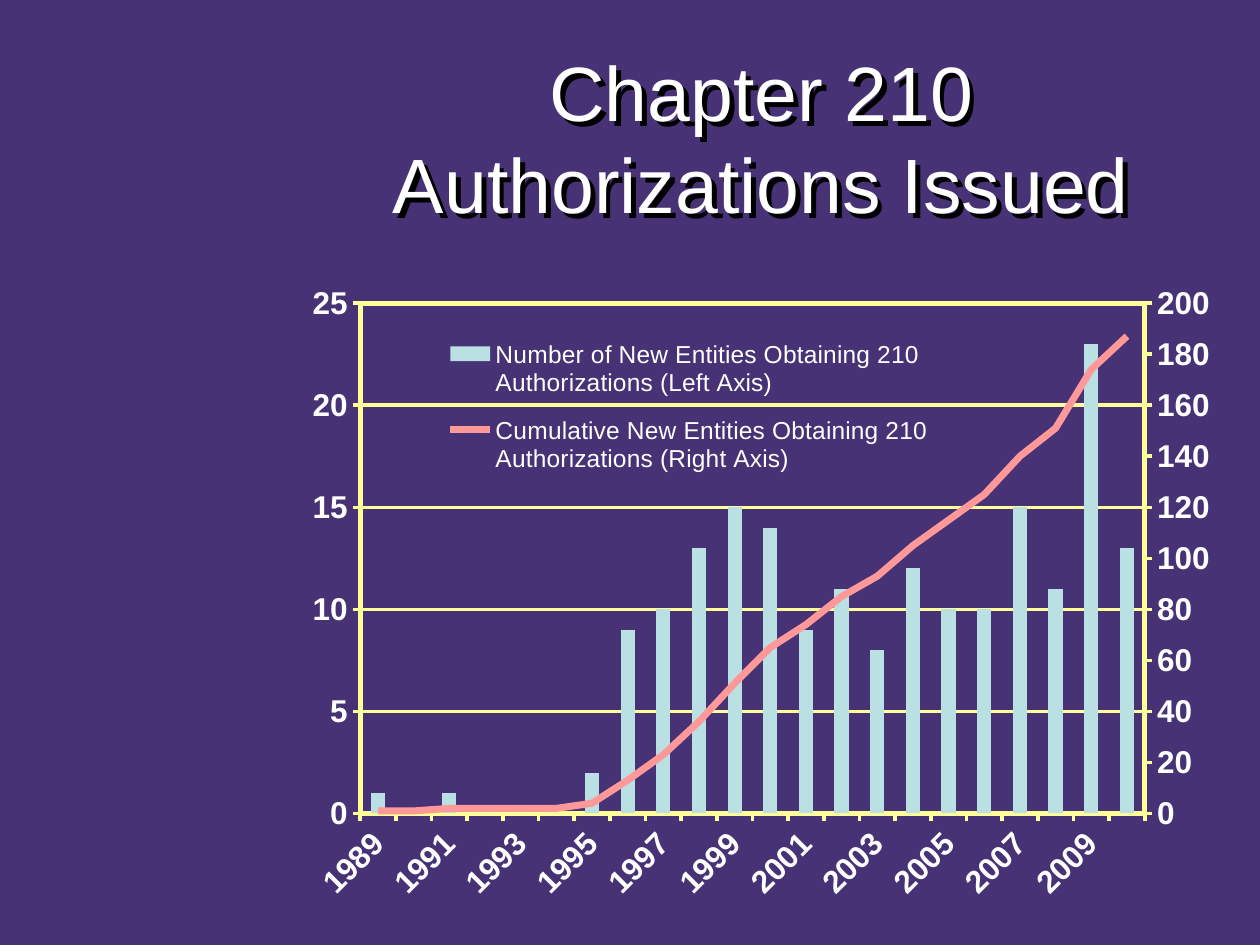
"""Build the slide on Chapter 210 authorizations with a two-axis chart."""
from copy import deepcopy

from lxml import etree
from pptx import Presentation
from pptx.chart.axis import ValueAxis
from pptx.chart.data import CategoryChartData
from pptx.dml.color import RGBColor
from pptx.enum.chart import XL_CHART_TYPE as ChartType
from pptx.enum.chart import XL_LEGEND_POSITION as LegendPosition
from pptx.enum.chart import XL_MARKER_STYLE as MarkerStyle
from pptx.enum.chart import XL_TICK_MARK as TickMark
from pptx.enum.text import MSO_ANCHOR as Anchor
from pptx.enum.text import PP_ALIGN as Align
from pptx.oxml import parse_xml
from pptx.oxml.ns import qn
from pptx.util import Cm, Pt

TITLE = "Chapter 210 Authorizations Issued"
YEARS = [str(year) for year in range(1989, 2011)]
NEW_NAME = "Number of New Entities Obtaining 210 Authorizations (Left Axis)"
NEW_VALUES = [1, 0, 1, 0, 0, 0, 2, 9, 10, 13, 15, 14, 9, 11, 8, 12, 10, 10, 15, 11, 23, 13]
TOTAL_NAME = "Cumulative New Entities Obtaining 210 Authorizations (Right Axis)"
TOTAL_VALUES = [1, 1, 2, 2, 2, 2, 4, 13, 23, 36, 51, 65, 74, 85, 93, 105, 115, 125,
                140, 151, 174, 187]
COLORS = {"background": "473275", "text": "FFFFFF", "shadow": "000000",
          "axis": "FFFF99", "bar": "BBE0E3", "line": "FF9999"}
FONT = "Arial"
TITLE_BOX = (5.93, 0.64, 18.84, 4.23)
CHART_BOX = (5.93, 5.5, 18.84, 12.91)
PLOT_BOX = (7.26, 6.11, 15.82, 10.29)
LEGEND_BOX = (8.9, 6.47, 9.99, 3.47)
CHART_NS = "http://schemas.openxmlformats.org/drawingml/2006/chart"
DRAWING_NS = "http://schemas.openxmlformats.org/drawingml/2006/main"


def color(name):
    return RGBColor.from_string(COLORS[name])


def style_line(line, name, width):
    line.color.rgb = color(name)
    line.width = Pt(width)


def style_font(font, size, bold=False):
    font.name = FONT
    font.size = Pt(size)
    font.bold = bold
    font.color.rgb = color("text")


def manual_layout(box, inner=False):
    left, top, width, height = box
    chart_left, chart_top, chart_width, chart_height = CHART_BOX
    shares = {"x": (left - chart_left) / chart_width, "y": (top - chart_top) / chart_height,
              "w": width / chart_width, "h": height / chart_height}
    target = '<c:layoutTarget val="inner"/>' if inner else ""
    modes = '<c:xMode val="edge"/><c:yMode val="edge"/>'
    sizes = "".join(f'<c:{key} val="{share:.4f}"/>' for key, share in shares.items())
    return parse_xml(f'<c:layout xmlns:c="{CHART_NS}"><c:manualLayout>'
                     f"{target}{modes}{sizes}</c:manualLayout></c:layout>")


def remove_children(element, tag):
    for child in element.findall(qn(tag)):
        element.remove(child)


def add_title(slide):
    shape = slide.shapes.add_textbox(*map(Cm, TITLE_BOX))
    shape._element.spPr.append(parse_xml(
        f'<a:effectLst xmlns:a="{DRAWING_NS}">'
        f'<a:outerShdw dist="{Pt(4)}" dir="2700000" algn="ctr" rotWithShape="0">'
        f'<a:srgbClr val="{COLORS["shadow"]}"/></a:outerShdw></a:effectLst>'))
    frame = shape.text_frame
    frame.word_wrap = True
    frame.vertical_anchor = Anchor.MIDDLE
    paragraph = frame.paragraphs[0]
    paragraph.alignment = Align.CENTER
    run = paragraph.add_run()
    run.text = TITLE
    style_font(run.font, 44)


def style_axis(axis):
    axis.major_tick_mark = TickMark.OUTSIDE
    axis.minor_tick_mark = TickMark.NONE
    style_line(axis.format.line, "axis", 2)
    style_font(axis.tick_labels.font, 18, True)


def style_axes(chart):
    category, value = chart.category_axis, chart.value_axis
    style_axis(category)
    style_axis(value)
    category._element.find(qn("c:txPr")).find(qn("a:bodyPr")).set("rot", "-2700000")
    no_multi = category._element.find(qn("c:noMultiLvlLbl"))
    for tag, step in (("tickLblSkip", 2), ("tickMarkSkip", 1)):
        no_multi.addprevious(parse_xml(f'<c:{tag} xmlns:c="{CHART_NS}" val="{step}"/>'))
    value.minimum_scale, value.maximum_scale, value.major_unit = 0, 25, 5
    value.has_major_gridlines = True
    style_line(value.major_gridlines.format.line, "axis", 2)


def move_total_to_right_axis(chart):
    category, value = chart.category_axis._element, chart.value_axis._element
    right, hidden = deepcopy(value), deepcopy(category)
    for element, own, other in ((right, "9002", "9001"), (hidden, "9001", "9002")):
        element.find(qn("c:axId")).set("val", own)
        element.find(qn("c:crossAx")).set("val", other)
    hidden.find(qn("c:delete")).set("val", "1")
    right.find(qn("c:axPos")).set("val", "r")
    right.find(qn("c:crosses")).set("val", "max")
    right_axis = ValueAxis(right)
    right_axis.has_major_gridlines = False
    right_axis.maximum_scale, right_axis.major_unit = 200, 20
    value.addnext(right)
    right.addnext(hidden)

    bars = category.getparent().find(qn("c:barChart"))
    total = bars.findall(qn("c:ser"))[1]
    remove_children(total, "c:invertIfNegative")
    lines = parse_xml(f'<c:lineChart xmlns:c="{CHART_NS}"><c:grouping val="standard"/>'
                      '<c:varyColors val="0"/><c:marker val="1"/>'
                      '<c:axId val="9001"/><c:axId val="9002"/></c:lineChart>')
    lines.find(qn("c:varyColors")).addnext(total)
    bars.addnext(lines)


def add_chart(slide):
    data = CategoryChartData()
    data.categories = YEARS
    data.add_series(NEW_NAME, NEW_VALUES)
    data.add_series(TOTAL_NAME, TOTAL_VALUES)
    chart = slide.shapes.add_chart(
        ChartType.COLUMN_CLUSTERED, *map(Cm, CHART_BOX), data).chart
    chart.has_title = False
    style_font(chart.font, 18)
    chart.plots[0].gap_width = 150
    chart.plots[0].vary_by_categories = False
    style_axes(chart)
    move_total_to_right_axis(chart)

    series = {item.name: item for plot in chart.plots for item in plot.series}
    bar, line = series[NEW_NAME], series[TOTAL_NAME]
    bar.format.fill.solid()
    bar.format.fill.fore_color.rgb = color("bar")
    style_line(line.format.line, "line", 4)
    line.marker.style = MarkerStyle.NONE
    line.smooth = False

    plot_area = chart.category_axis._element.getparent()
    remove_children(plot_area, "c:layout")
    plot_area.insert(0, manual_layout(PLOT_BOX, True))
    border = etree.SubElement(plot_area, qn("c:spPr"))
    etree.SubElement(border, qn("a:noFill"))
    outline = etree.SubElement(border, qn("a:ln"), w=str(Pt(3)))
    outline_fill = etree.SubElement(outline, qn("a:solidFill"))
    etree.SubElement(outline_fill, qn("a:srgbClr"), val=COLORS["axis"])

    chart.has_legend = True
    legend = chart.legend
    legend.position = LegendPosition.RIGHT
    legend.include_in_layout = True
    style_font(legend.font, 14)
    remove_children(legend._element, "c:layout")
    legend._element.find(qn("c:overlay")).addprevious(manual_layout(LEGEND_BOX))


def main():
    presentation = Presentation()
    presentation.slide_width, presentation.slide_height = Cm(25.4), Cm(19.05)
    slide = presentation.slides.add_slide(presentation.slide_layouts[6])
    slide.background.fill.solid()
    slide.background.fill.fore_color.rgb = color("background")
    add_title(slide)
    add_chart(slide)
    presentation.save("out.pptx")


if __name__ == "__main__":
    main()
